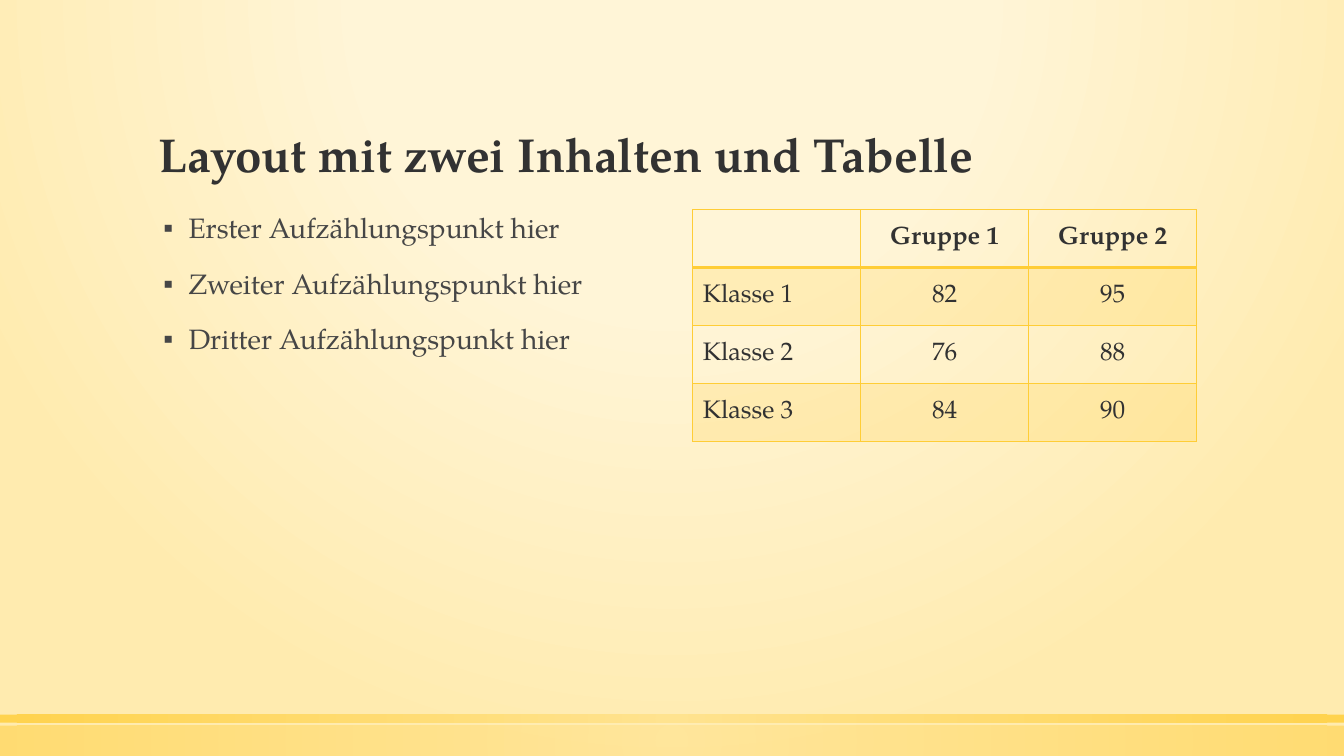
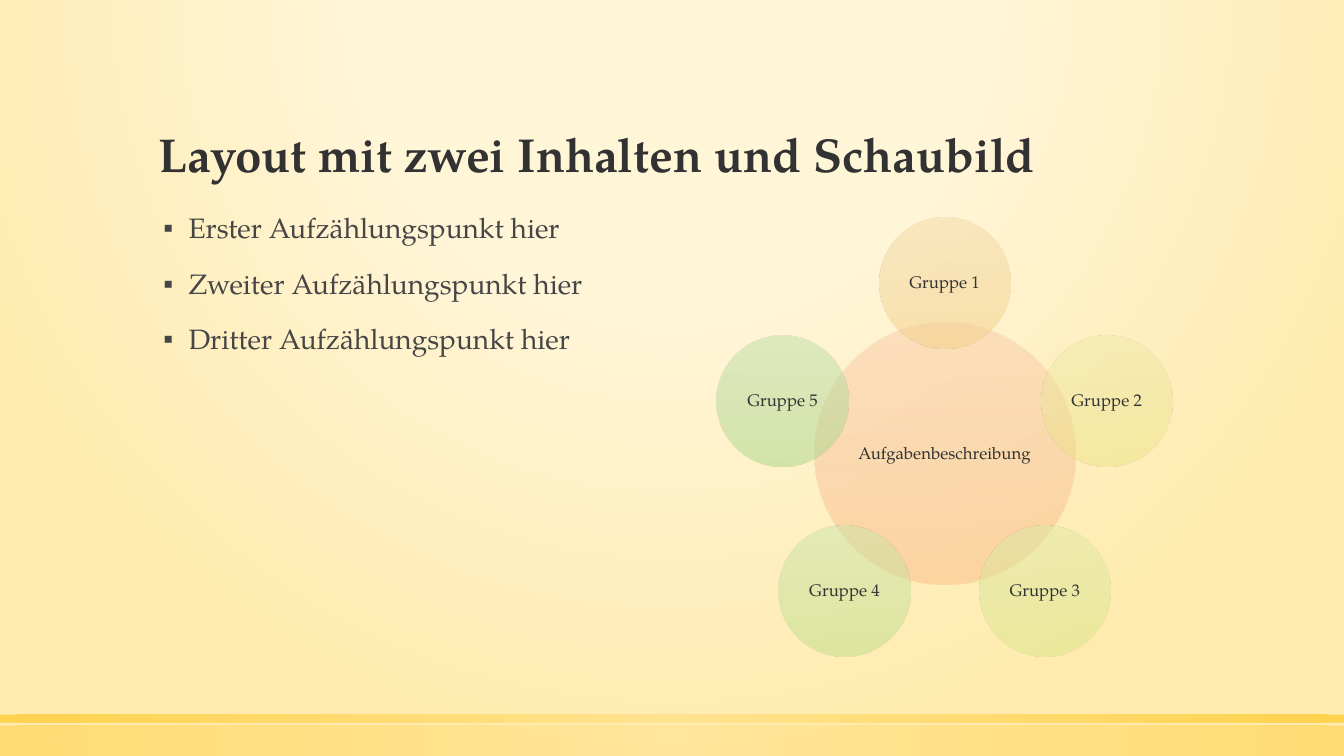
import math
from dataclasses import dataclass

from lxml import etree
from pptx import Presentation
from pptx import util as u
from pptx.dml.color import RGBColor
from pptx.enum import shapes, text
from pptx.oxml import parse_xml
from pptx.oxml.ns import nsdecls, qn


@dataclass(frozen=True)
class Theme:
    font: str = "TeX Gyre Pagella"
    ink: str = "323232"
    body_ink: str = "464646"
    gold: str = "FFCD36"
    light_gold: str = "FFE186"
    cream: str = "FFF5D7"
    sand: str = "FFEBAF"
    title_size: int = 34
    body_size: int = 20
    table_size: int = 18
    circle_size: int = 12


theme = Theme()
CENTRE_FOCUS = (50, 50, 50, 50)


def format_text(paragraph, size, color, align, bold=False):
    paragraph.alignment = align
    for run in paragraph.runs:
        run.font.name = theme.font
        run.font.size = u.Pt(size)
        run.font.bold = bold
        run.font.color.rgb = RGBColor.from_string(color)


def paint_gradient(element, stops, focus=None):
    """Turn the solid fill of an element into a gradient of (position, colour, opacity).

    With a focus (left, top, right, bottom in percent) it is circular, else vertical.
    """
    stop_xml = "".join(
        f'<a:gs pos="{position * 1000}"><a:srgbClr val="{color}">'
        f'<a:alpha val="{opacity * 1000}"/></a:srgbClr></a:gs>'
        for position, color, opacity in stops)
    if focus:
        left, top, right, bottom = (percent * 1000 for percent in focus)
        shading = (f'<a:path path="circle"><a:fillToRect l="{left}" t="{top}" '
                   f'r="{right}" b="{bottom}"/></a:path>')
    else:
        shading = '<a:lin ang="5400000" scaled="0"/>'
    solid = element.xpath(".//a:solidFill")[0]
    solid.getparent().replace(solid, parse_xml(
        f'<a:gradFill {nsdecls("a")} rotWithShape="1"><a:gsLst>{stop_xml}</a:gsLst>'
        f'{shading}</a:gradFill>'))


prs = Presentation()
prs.slide_width, prs.slide_height = u.Inches(13.33), u.Inches(7.5)

# Shared background
master = prs.slide_master
master.background.fill.solid()
paint_gradient(master._element,
               [(0, theme.cream, 59), (40, theme.cream, 66), (100, theme.sand, 100)],
               (50, -80, 50, 180))

# Shared places of title and list
layout = prs.slide_layouts.get_by_name("Title and Content")
PLACES = {0: (1.47, 0.51, 10.4, 1.35), 1: (1.47, 2.08, 5, 4.51)}
for placeholder in layout.placeholders:
    place = PLACES.get(placeholder.placeholder_format.idx)
    if place:
        (placeholder.left, placeholder.top,
         placeholder.width, placeholder.height) = map(u.Inches, place)

# Titles and lists
TITLES = ["Layout mit zwei Inhalten und Tabelle", "Layout mit zwei Inhalten und Schaubild"]
POINTS = ["Erster Aufzählungspunkt hier", "Zweiter Aufzählungspunkt hier",
          "Dritter Aufzählungspunkt hier"]
for heading in TITLES:
    slide = prs.slides.add_slide(layout)
    title = slide.shapes.title.text_frame
    title.text = heading
    title.auto_size = text.MSO_AUTO_SIZE.NONE
    title.vertical_anchor = text.MSO_ANCHOR.BOTTOM
    title.paragraphs[0].line_spacing = 0.9
    format_text(title.paragraphs[0], theme.title_size, theme.ink, text.PP_ALIGN.LEFT, True)

    points = slide.placeholders[1].text_frame
    points.text = "\n".join(POINTS)
    points.auto_size = text.MSO_AUTO_SIZE.NONE
    for point in points.paragraphs:
        format_text(point, theme.body_size, theme.body_ink, text.PP_ALIGN.LEFT)
        point.line_spacing = 0.9
        point.space_before = u.Pt(18)
        properties = point._p.get_or_add_pPr()
        properties.set("marL", str(u.Inches(0.3)))
        properties.set("indent", str(u.Inches(-0.25)))
        etree.SubElement(properties, qn("a:buChar")).set("char", "▪")

table_slide, circle_slide = prs.slides

# Bottom bands, drawn once and moved to the master
for top, height, opacity in [(7.2, 0.3, 50), (7.09, 0.08, 80)]:
    band = table_slide.shapes.add_shape(
        shapes.MSO_SHAPE.RECTANGLE, 0, u.Inches(top), prs.slide_width, u.Inches(height))
    band.shadow.inherit = False
    band.line.fill.background()
    band.fill.solid()
    paint_gradient(band._element,
                   [(0, theme.light_gold, opacity), (100, theme.gold, opacity)], CENTRE_FOCUS)
    master.shapes._spTree.append(band._element)

# Table of classes and groups
ROWS = [("", "Gruppe 1", "Gruppe 2"),
        ("Klasse 1", "82", "95"),
        ("Klasse 2", "76", "88"),
        ("Klasse 3", "84", "90")]
results = table_slide.shapes.add_table(
    len(ROWS), len(ROWS[0]), u.Inches(6.87), u.Inches(2.08), u.Inches(5), u.Inches(2.3)).table
results.horz_banding = False
results.first_row = False
for row, values in enumerate(ROWS):
    for column, value in enumerate(values):
        cell = results.cell(row, column)
        cell.text = value
        cell.vertical_anchor = text.MSO_ANCHOR.MIDDLE
        align = text.PP_ALIGN.CENTER if column else text.PP_ALIGN.LEFT
        format_text(cell.text_frame.paragraphs[0], theme.table_size, theme.ink, align, row == 0)
        cell_properties = cell._tc.get_or_add_tcPr()
        if row % 2:
            cell.fill.solid()
            cell.fill.fore_color.rgb = RGBColor.from_string(theme.gold)
            tint = cell_properties.xpath(".//a:srgbClr")[0]
            etree.SubElement(tint, qn("a:alpha")).set("val", "20000")
        else:
            cell.fill.background()
        # The rule under the header row is heavier
        weights = {"L": 1, "R": 1, "T": 2 if row == 1 else 1, "B": 2 if row == 0 else 1}
        for order, (side, weight) in enumerate(weights.items()):
            cell_properties.insert(order, parse_xml(
                f'<a:ln{side} {nsdecls("a")} w="{u.Pt(weight)}"><a:solidFill>'
                f'<a:srgbClr val="{theme.gold}"/></a:solidFill></a:ln{side}>'))

# Task circle with the groups on a ring around it, clockwise from the top
HUB_X, HUB_Y, HUB_SIZE = 9.37, 4.5, 2.59
RING_RADIUS, GROUP_SIZE = 1.69, 1.3
GROUP_COLORS = [("F6DBA8", "F3D49A", "F5D187"),
                ("F1EAA8", "EDE59A", "EEE587"),
                ("E0EBA8", "DAE79A", "D8E787"),
                ("CDE6A8", "C5E19A", "BEE088"),
                ("BFE0A9", "B4DA9B", "A9D889")]
circles = [("Aufgabenbeschreibung", HUB_X, HUB_Y, HUB_SIZE, ("FACDA9", "F8C39A", "FBBB87"))]
for number, colors in enumerate(GROUP_COLORS):
    angle = math.tau * number / len(GROUP_COLORS)
    circles.append((f"Gruppe {number + 1}", HUB_X + RING_RADIUS * math.sin(angle),
                    HUB_Y - RING_RADIUS * math.cos(angle), GROUP_SIZE, colors))

for label, x, y, size, colors in circles:
    circle = circle_slide.shapes.add_shape(
        shapes.MSO_SHAPE.OVAL, u.Inches(x - size / 2), u.Inches(y - size / 2),
        u.Inches(size), u.Inches(size))
    circle.shadow.inherit = False
    circle.line.fill.background()
    circle.fill.solid()
    paint_gradient(circle._element,
                   [(position, color, 50) for position, color in zip((0, 50, 100), colors)])
    frame = circle.text_frame
    frame.text = label
    frame.word_wrap = True
    frame.vertical_anchor = text.MSO_ANCHOR.MIDDLE
    frame.margin_left = frame.margin_right = u.Inches(0.02)
    frame.margin_top = frame.margin_bottom = u.Inches(0.02)
    frame.paragraphs[0].line_spacing = 0.9
    format_text(frame.paragraphs[0], theme.circle_size, theme.ink, text.PP_ALIGN.CENTER)

prs.save("out.pptx")
